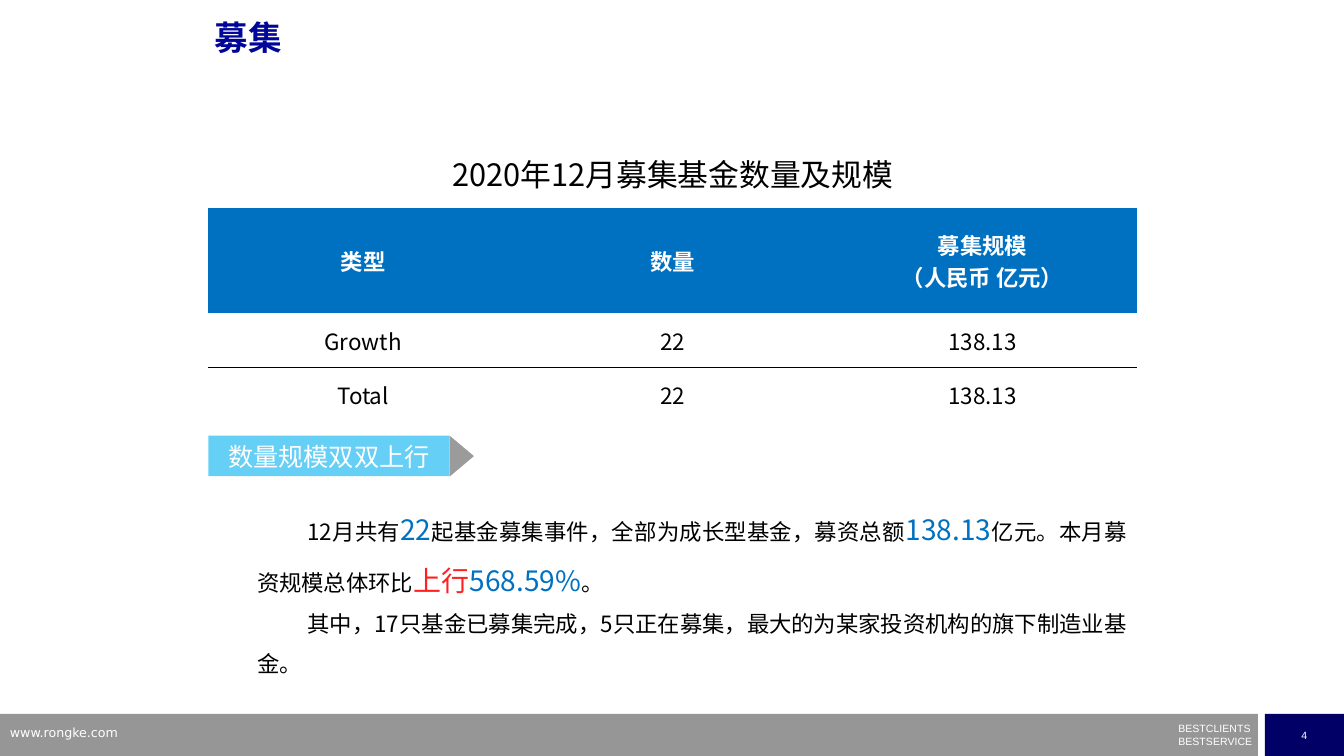
from dataclasses import dataclass

from lxml.etree import SubElement
from pptx import Presentation
from pptx.dml.color import RGBColor
from pptx.enum.shapes import MSO_SHAPE
from pptx.enum.text import MSO_ANCHOR, MSO_AUTO_SIZE, PP_ALIGN
from pptx.oxml import parse_xml
from pptx.oxml.ns import nsdecls, qn
from pptx.util import Pt

CJK = "Noto Sans CJK SC"
BLUE, RED, WHITE, BLACK = "0070C0", "FF2121", "FFFFFF", "000000"
NO_GRID_STYLE = "{2D5ABB26-0587-4C30-8999-92F81FD0307C}"


@dataclass
class Box:
    """A place on the slide, in points."""
    left: float
    top: float
    width: float
    height: float

    def lengths(self) -> tuple:
        """Return left, top, width and height as lengths."""
        return Pt(self.left), Pt(self.top), Pt(self.width), Pt(self.height)


@dataclass
class Block:
    """A filled preset shape."""
    box: Box
    fill: str
    preset: MSO_SHAPE = MSO_SHAPE.RECTANGLE
    opacity: int = 100
    rotation: float = 0


@dataclass
class Row:
    """A table row with its height and look."""
    texts: tuple
    height: float
    size: float = 16
    color: str = BLACK
    bold: bool = False
    fill: str = ""
    rule: str = ""


@dataclass
class Phrase:
    """A stretch of the commentary in one format."""
    text: str
    size: float = 16
    color: str = BLACK


ROWS = [
    Row(("2020年12月募集基金数量及规模", "", ""), 50.4, size=22),
    Row(("类型", "数量", "募集规模\n（人民币 亿元）"), 75.6, color=WHITE, bold=True, fill=BLUE),
    Row(("Growth", "22", "138.13"), 38.9, rule="a:lnB"),
    Row(("Total", "22", "138.13"), 38.2, rule="a:lnT"),
]
COMMENTARY = [
    [Phrase("12月共有"), Phrase("22", 20, BLUE),
     Phrase("起基金募集事件，全部为成长型基金，募资总额"), Phrase("138.13", 20, BLUE),
     Phrase("亿元。本月募资规模总体环比"), Phrase("上行", 20, RED),
     Phrase("568.59%", 20, BLUE), Phrase("。")],
    [Phrase("其中，17只基金已募集完成，5只正在募集，最大的为某家投资机构的旗下制造业基金。")],
]


def rgb(color: str) -> RGBColor:
    """Turn a hex string into a colour."""
    return RGBColor.from_string(color)


def write(paragraph, text: str, *, size: float, color: str = WHITE, font: str = CJK,
          bold: bool = False, align=None, line_spacing=None) -> None:
    """Append formatted text to a paragraph."""
    if align is not None:
        paragraph.alignment = align
    if line_spacing is not None:
        paragraph.line_spacing = line_spacing
    for index, line in enumerate(text.split("\n")):
        if index:
            paragraph.add_line_break()
        run = paragraph.add_run()
        run.text = line
        run.font.size, run.font.bold, run.font.name = Pt(size), bold, font
        run.font.color.rgb = rgb(color)
        SubElement(run.font._element, qn("a:ea")).set("typeface", CJK)


def draw_block(shapes, block: Block):
    """Draw a filled shape and return it."""
    shape = shapes.add_shape(block.preset, *block.box.lengths())
    shape.rotation = block.rotation
    shape.shadow.inherit = False
    shape.fill.solid()
    shape.fill.fore_color.rgb = rgb(block.fill)
    shape.line.fill.background()
    if block.opacity < 100:
        fill_color = next(shape.element.spPr.iter(qn("a:srgbClr")))
        SubElement(fill_color, qn("a:alpha")).set("val", str(block.opacity * 1000))
    shape.text_frame.vertical_anchor = MSO_ANCHOR.MIDDLE
    return shape


def place(shape, box: Box) -> None:
    """Move and size a placeholder."""
    shape.left, shape.top, shape.width, shape.height = box.lengths()
    shape.text_frame.auto_size = MSO_AUTO_SIZE.NONE
    shape.text_frame.vertical_anchor = MSO_ANCHOR.TOP


def draw_footer(shapes) -> None:
    """Draw the bar, address, motto and page number."""
    draw_block(shapes, Block(Box(0, 510, 898.5, 30), "969696"))
    page = draw_block(shapes, Block(Box(903.5, 510, 56.5, 30), "000066")).text_frame
    page.word_wrap = False
    write(page.paragraphs[0], "4", size=7.5, font="Arial", align=PP_ALIGN.CENTER)

    motto = shapes.add_textbox(*Box(841.7, 519.8, 54.7, 14.4).lengths()).text_frame
    motto.word_wrap = True
    motto.margin_left = motto.margin_top = motto.margin_right = motto.margin_bottom = 0
    write(motto.paragraphs[0], "BESTCLIENTS", size=7.5, font="Arial", line_spacing=0.5)
    service = motto.add_paragraph()
    service.space_before = Pt(4.3)
    write(service, "BESTSERVICE", size=7.5, font="Arial", line_spacing=0.5)

    address = shapes.add_textbox(*Box(0, 514, 230.4, 18.7).lengths()).text_frame
    address.word_wrap = True
    write(address.paragraphs[0], "www.rongke.com", size=9, font="DejaVu Sans")


def draw_table(shapes) -> None:
    """Draw the fund table with its merged heading."""
    box = Box(148.8, 97.9, 663.6, sum(row.height for row in ROWS))
    frame = shapes.add_table(len(ROWS), 3, *box.lengths())
    table = frame.table
    table.first_row = table.horz_banding = False
    next(frame.element.iter(qn("a:tableStyleId"))).text = NO_GRID_STYLE
    table.cell(0, 0).merge(table.cell(0, 2))
    for row_index, row in enumerate(ROWS):
        table.rows[row_index].height = Pt(row.height)
        for column_index, text in enumerate(row.texts):
            cell = table.cell(row_index, column_index)
            cell.vertical_anchor = MSO_ANCHOR.MIDDLE
            cell.margin_left = cell.margin_top = cell.margin_right = Pt(0.7)
            cell.margin_bottom = 0
            if row.fill:
                cell.fill.solid()
                cell.fill.fore_color.rgb = rgb(row.fill)
            else:
                cell.fill.background()
            if row.rule:
                cell._tc.get_or_add_tcPr().insert(0, parse_xml(
                    f'<{row.rule} {nsdecls("a")} w="{Pt(1)}"><a:solidFill>'
                    f'<a:srgbClr val="{BLACK}"/></a:solidFill></{row.rule}>'))
            if text:
                write(cell.text_frame.paragraphs[0], text, size=row.size, color=row.color,
                      bold=row.bold, align=PP_ALIGN.CENTER)


def draw_banner(shapes) -> None:
    """Draw the arrow-shaped subheading."""
    banner = shapes.add_group_shape().shapes
    label = draw_block(banner, Block(Box(148.8, 311.2, 172.4, 29), "00B0F0", opacity=60))
    write(label.text_frame.paragraphs[0], "数量规模双双上行", size=18, align=PP_ALIGN.CENTER)
    draw_block(banner, Block(Box(315.4, 317.2, 29, 17.2), "595959",
                             MSO_SHAPE.ISOSCELES_TRIANGLE, 60, 90))


def fill_commentary(commentary) -> None:
    """Write the commentary paragraphs into the body placeholder."""
    place(commentary, Box(176.4, 350.6, 635.8, 134.6))
    frame = commentary.text_frame
    for index, phrases in enumerate(COMMENTARY):
        paragraph = frame.add_paragraph() if index else frame.paragraphs[0]
        properties = paragraph._p.get_or_add_pPr()
        properties.set("marL", "0")
        properties.set("indent", str(Pt(36)))
        SubElement(properties, qn("a:buNone"))
        paragraph.space_before = Pt(0)
        for phrase in phrases:
            write(paragraph, phrase.text, size=phrase.size, color=phrase.color,
                  align=PP_ALIGN.JUSTIFY, line_spacing=1.5)


def main() -> None:
    """Build and save the slide."""
    presentation = Presentation()
    presentation.slide_width, presentation.slide_height = Pt(960), Pt(540)
    slide = presentation.slides.add_slide(presentation.slide_layouts[1])
    draw_footer(slide.shapes)
    heading = slide.shapes.title
    place(heading, Box(146.2, 11.5, 648, 50.4))
    write(heading.text_frame.paragraphs[0], "募集", size=24, color="000798", font="Arial",
          bold=True, align=PP_ALIGN.LEFT, line_spacing=0.9)
    fill_commentary(slide.placeholders[1])
    draw_banner(slide.shapes)
    draw_table(slide.shapes)
    presentation.save("out.pptx")


if __name__ == "__main__":
    main()
